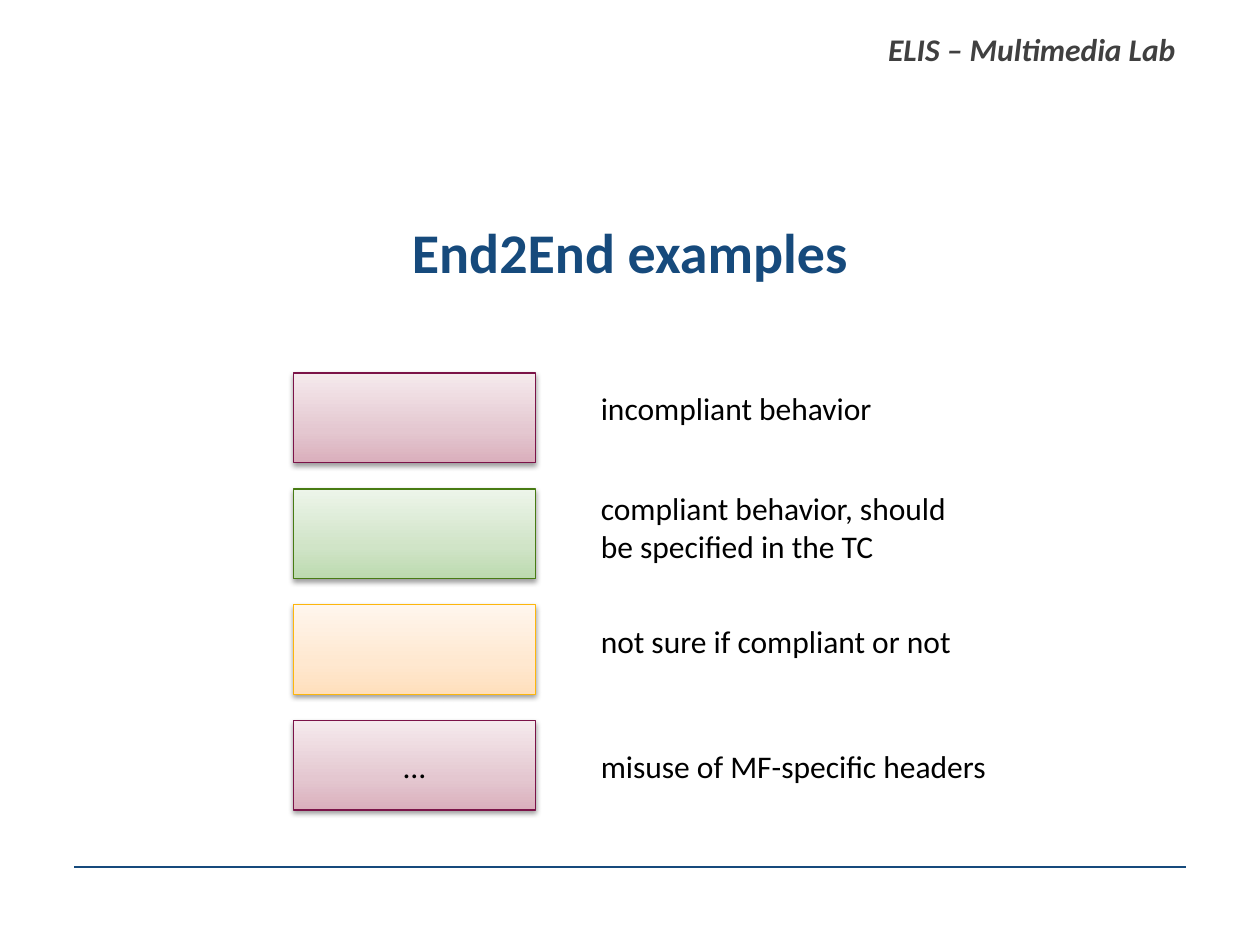
from lxml import etree
from pptx import Presentation
from pptx.dml.color import RGBColor
from pptx.enum.shapes import MSO_CONNECTOR, MSO_SHAPE
from pptx.enum.text import MSO_ANCHOR, MSO_AUTO_SIZE, PP_ALIGN
from pptx.oxml import parse_xml
from pptx.oxml.ns import nsdecls, qn
from pptx.util import Inches, Pt

RECTANGLE = MSO_SHAPE.RECTANGLE
STRAIGHT = MSO_CONNECTOR.STRAIGHT
MIDDLE = MSO_ANCHOR.MIDDLE
NO_FIT = MSO_AUTO_SIZE.NONE
LEFT, CENTER = PP_ALIGN.LEFT, PP_ALIGN.CENTER

NAVY = RGBColor(0x16, 0x4A, 0x7C)
GRAY = RGBColor(0x40, 0x40, 0x40)
BLACK = RGBColor(0x00, 0x00, 0x00)
PLUM = RGBColor(0x7B, 0x13, 0x48)
GREEN = RGBColor(0x48, 0x7B, 0x13)
AMBER = RGBColor(0xFD, 0xB6, 0x0C)
PLUM_TINTS = (RGBColor(0xDA, 0xAF, 0xBC), RGBColor(0xE4, 0xC7, 0xD0), RGBColor(0xF5, 0xEA, 0xED))
GREEN_TINTS = (RGBColor(0xBC, 0xDA, 0xAF), RGBColor(0xD0, 0xE4, 0xC7), RGBColor(0xED, 0xF5, 0xEA))
AMBER_TINTS = (RGBColor(0xFF, 0xDF, 0xBC), RGBColor(0xFF, 0xE8, 0xD0), RGBColor(0xFF, 0xF6, 0xED))

BODY = {"name": "Calibri", "size": Pt(18), "bold": False, "italic": False}
HEADER = {**BODY, "bold": True, "italic": True}
HEADING = {**BODY, "size": Pt(32), "bold": True}

LEGEND = [
    ("", PLUM, PLUM_TINTS, "incompliant behavior", 3.04, 3, 0.4),
    ("", GREEN, GREEN_TINTS, "compliant behavior, should be specified in the TC", 3.83, 3, 0.71),
    ("", AMBER, AMBER_TINTS, "not sure if compliant or not", 4.89, 3, 0.4),
    ("…", PLUM, PLUM_TINTS, "misuse of MF-specific headers", 5.88, 3.33, 0.4),
]
SWATCH_TOP, SWATCH_STEP = 2.96, 0.92


class LegendPage:
    def __init__(self, deck):
        self.page = deck.slides.add_slide(deck.slide_layouts[1])
        title = self.page.shapes.title
        title.element.getparent().remove(title.element)

    def add_span(self, frame, text, style, color, align=LEFT):
        paragraph = frame.paragraphs[0]
        paragraph.alignment = align
        span = paragraph.add_run()
        span.text = text
        for name, value in style.items():
            setattr(span.font, name, value)
        span.font.color.rgb = color

    def heading(self, text, left, top, width, height):
        box = self.page.placeholders[1]
        box.left, box.top, box.width, box.height = map(Inches, (left, top, width, height))
        frame = box.text_frame
        frame.auto_size = NO_FIT
        properties = frame.paragraphs[0]._p.get_or_add_pPr()
        properties.set("marL", "0")
        properties.set("indent", "0")
        etree.SubElement(properties, qn("a:buNone"))
        frame.paragraphs[0].space_before = Pt(0)
        self.add_span(frame, text, HEADING, NAVY, CENTER)

    def text(self, text, left, top, width, height, style=BODY, color=BLACK, wrap=True):
        box = self.page.shapes.add_textbox(*map(Inches, (left, top, width, height)))
        box.text_frame.word_wrap = wrap
        self.add_span(box.text_frame, text, style, color)

    def rule(self, left, right, top):
        line = self.page.shapes.add_connector(STRAIGHT, *map(Inches, (left, top, right, top)))
        line.line.color.rgb = NAVY
        line.line.width = Pt(1.5)
        etree.SubElement(line.element.spPr, qn("a:effectLst"))

    def swatch(self, text, left, top, width, height, border, tints):
        box = self.page.shapes.add_shape(RECTANGLE, *map(Inches, (left, top, width, height)))
        box.line.color.rgb = border
        box.line.width = Pt(0.75)
        stops = "".join(
            f'<a:gs pos="{place * 1000}"><a:srgbClr val="{tint}"/></a:gs>'
            for place, tint in zip((0, 35, 100), tints)
        )
        gradient = parse_xml(
            f'<a:gradFill {nsdecls("a")} rotWithShape="1"><a:gsLst>{stops}</a:gsLst>'
            '<a:lin ang="16200000" scaled="1"/></a:gradFill>'
        )
        properties = box.element.spPr
        properties.find(qn("a:ln")).addprevious(gradient)
        properties.append(parse_xml(
            f'<a:effectLst {nsdecls("a")}><a:outerShdw blurRad="{Pt(3.1)}" dist="{Pt(1.6)}" '
            'dir="5400000" rotWithShape="0"><a:srgbClr val="000000"><a:alpha val="38000"/>'
            '</a:srgbClr></a:outerShdw></a:effectLst>'
        ))
        if text:
            box.text_frame.vertical_anchor = MIDDLE
            self.add_span(box.text_frame, text, BODY, BLACK, CENTER)


def main():
    deck = Presentation()
    deck.slide_width, deck.slide_height = Inches(10), Inches(7.5)
    page = LegendPage(deck)
    page.rule(0.59, 9.41, 6.88)
    page.text("ELIS – Multimedia Lab", 6.95, 0.19, 2.5, 0.4, HEADER, GRAY, wrap=False)
    page.heading("End2End examples", 0.75, 1.68, 8.5, 1.61)
    for row, (mark, border, tints, label, top, width, height) in enumerate(LEGEND):
        page.swatch(mark, 2.33, SWATCH_TOP + row * SWATCH_STEP, 1.92, 0.71, border, tints)
        page.text(label, 4.67, top, width, height)
    deck.save("out.pptx")


if __name__ == "__main__":
    main()
